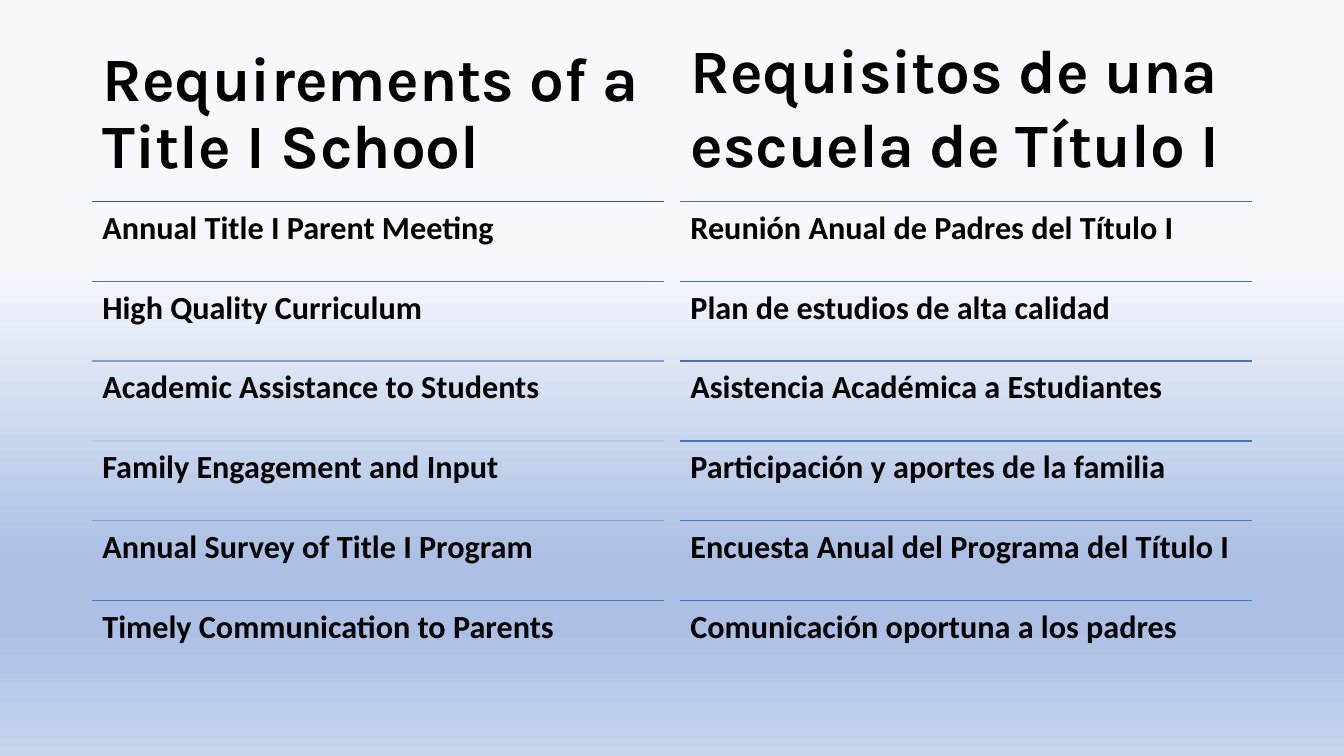
from copy import deepcopy
from dataclasses import dataclass

from lxml.etree import SubElement
from pptx import Presentation
from pptx.dml.color import RGBColor
from pptx.enum.shapes import MSO_CONNECTOR
from pptx.enum.text import MSO_ANCHOR, MSO_AUTO_SIZE, PP_ALIGN
from pptx.oxml.ns import qn
from pptx.util import Cm, Pt


@dataclass(frozen=True)
class Theme:
    ink: str = "000000"
    blue: str = "4472C4"
    fades: tuple = ("325491", "4F73BD", "879BCE", "BCC6E2", "879BCE", "4F73BD")
    stops: tuple = ((0.35, "F6F8FC"), (0.74, "ABC0E4"),
                    (0.83, "ABC0E4"), (1, "C7D5ED"))
    head: tuple = ("Karla", Pt(44))
    body: tuple = ("Calibri", Pt(23))


def write(frame, text, font):
    """Put one bold, left-aligned run in the frame and return its paragraph."""
    frame.word_wrap = True
    para = frame.paragraphs[0]
    para.alignment = PP_ALIGN.LEFT
    run = para.add_run()
    run.text = text
    run.font.name, run.font.size = font
    run.font.bold = True
    run.font.color.rgb = RGBColor.from_string(theme.ink)
    return para


theme = Theme()
deck = Presentation()
deck.slide_width, deck.slide_height = Cm(33.87), Cm(19.05)
slide = deck.slides.add_slide(deck.slide_layouts[5])

# Background
fill = slide.background.fill
fill.gradient()
fill.gradient_angle = 270
stop_list = slide.element.find(".//" + qn("a:gsLst"))
for _ in theme.stops[2:]:
    stop_list.append(deepcopy(stop_list[0]))
for stop, (place, color) in zip(fill.gradient_stops, theme.stops):
    stop.position = place
    stop.color.rgb = RGBColor.from_string(color)

# Headings
left, right, wide = Cm(2.33), Cm(17.15), Cm(14.4)
title = slide.shapes.title
title.left, title.top, title.width, title.height = left, Cm(1.02), wide, Cm(3.68)
title.text_frame.auto_size = MSO_AUTO_SIZE.NONE
title.text_frame.vertical_anchor = MSO_ANCHOR.BOTTOM
write(title.text_frame, "Requirements of a Title I School",
      theme.head).line_spacing = 0.9

label = slide.shapes.add_textbox(right, Cm(0.69), Cm(15.27), Cm(4.01))
write(label.text_frame, "Requisitos de una escuela de Título I", theme.head)
label.text_frame.auto_size = MSO_AUTO_SIZE.SHAPE_TO_FIT_TEXT

# Two ruled lists
english = (
    "Annual Title I Parent Meeting",
    "High Quality Curriculum",
    "Academic Assistance to Students",
    "Family Engagement and Input",
    "Annual Survey of Title I Program",
    "Timely Communication to Parents",
)
spanish = (
    "Reunión Anual de Padres del Título I",
    "Plan de estudios de alta calidad",
    "Asistencia Académica a Estudiantes",
    "Participación y aportes de la familia",
    "Encuesta Anual del Programa del Título I",
    "Comunicación oportuna a los padres",
)
first, pitch, inset = Cm(5.08), Cm(2.01), Cm(0.25)
lists = ((left, english, theme.fades),
         (right, spanish, (theme.blue,) * len(spanish)))

for x, items, colors in lists:
    group = slide.shapes.add_group_shape()
    for row, (item, color) in enumerate(zip(items, colors)):
        y = first + row * pitch
        rule = group.shapes.add_connector(MSO_CONNECTOR.STRAIGHT, x, y, x + wide, y)
        rule.line.color.rgb = RGBColor.from_string(color)
        rule.line.width = Pt(1)
        SubElement(rule.element.spPr, qn("a:effectLst"))

        box = group.shapes.add_textbox(x, y, wide, pitch)
        frame = box.text_frame
        frame.margin_left = frame.margin_right = inset
        frame.margin_top = frame.margin_bottom = inset
        write(frame, item, theme.body).line_spacing = 0.9

deck.save("out.pptx")
